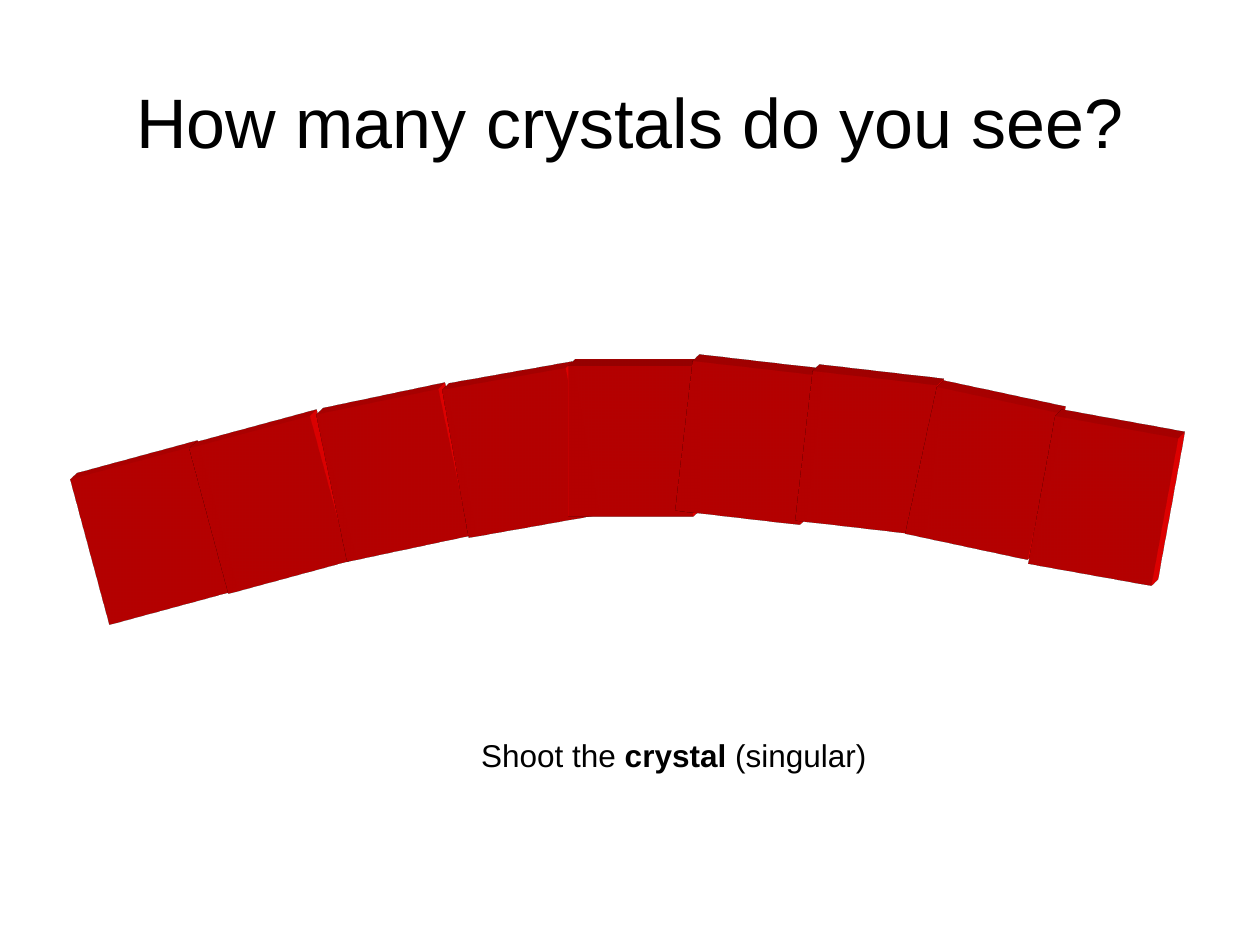
from lxml import etree
from pptx import Presentation
from pptx.dml.color import RGBColor
from pptx.enum.shapes import MSO_SHAPE
from pptx.enum.text import MSO_ANCHOR, MSO_AUTO_SIZE, PP_ALIGN
from pptx.oxml.ns import qn
from pptx.util import Inches, Pt

RECT = MSO_SHAPE.RECTANGLE
MIDDLE = MSO_ANCHOR.MIDDLE
CENTER = PP_ALIGN.CENTER
GROW = MSO_AUTO_SIZE.SHAPE_TO_FIT_TEXT

COLORS = {"text": "000000", "crystal": "FF0000"}
FONT = "Arial"
BLOCK_W, BLOCK_H = 1.19, 0.99
DEPTH = 0.15
BLOCKS = [
    (0.6, 3.76, 74.9),
    (1.54, 3.51, 74.9),
    (2.52, 3.28, 78.1),
    (3.51, 3.1, 79.9),
    (4.41, 3.01, 90),
    (5.33, 3.02, 96.6),
    (6.28, 3.1, 96.6),
    (7.2, 3.26, 102.1),
    (8.16, 3.48, 100.3),
]


def color(name):
    return RGBColor.from_string(COLORS[name])


def add_run(p, text, size, bold=False):
    r = p.add_run()
    r.text = text
    r.font.name = FONT
    r.font.size = Pt(size)
    r.font.bold = bold
    r.font.color.rgb = color("text")


def set_title(s, text):
    sp = s.shapes.title
    sp.left, sp.top, sp.width, sp.height = (Inches(v) for v in (0, 0, 10, 1.92))
    tf = sp.text_frame
    tf.vertical_anchor = MIDDLE
    p = tf.paragraphs[0]
    p.alignment = CENTER
    add_run(p, text, 40)


def extrude(sp):
    sp_pr = sp.fill._xPr
    scene = etree.SubElement(sp_pr, qn("a:scene3d"))
    etree.SubElement(scene, qn("a:camera"), prst="legacyObliqueTopRight")
    etree.SubElement(scene, qn("a:lightRig"), rig="legacyFlat3", dir="b")
    body = etree.SubElement(sp_pr, qn("a:sp3d"), prstMaterial="legacyMatte",
                            extrusionH=str(Inches(DEPTH)))
    tint = etree.SubElement(body, qn("a:extrusionClr"))
    etree.SubElement(tint, qn("a:srgbClr"), val=COLORS["crystal"])


def add_block(s, left, top, angle):
    sp = s.shapes.add_shape(RECT, Inches(left), Inches(top),
                            Inches(BLOCK_W), Inches(BLOCK_H))
    sp.rotation = angle
    sp.fill.solid()
    sp.fill.fore_color.rgb = color("crystal")
    sp.line.fill.background()
    sp.shadow.inherit = False
    extrude(sp)


def add_caption(s, parts):
    sp = s.shapes.add_textbox(Inches(3.72), Inches(5.79), Inches(3.29), Inches(0.4))
    tf = sp.text_frame
    tf.word_wrap = False
    tf.auto_size = GROW
    p = tf.paragraphs[0]
    for text, bold in parts:
        add_run(p, text, 18, bold)


def main():
    prs = Presentation()
    prs.slide_width, prs.slide_height = Inches(10), Inches(7.5)
    s = prs.slides.add_slide(prs.slide_layouts[5])
    set_title(s, "How many crystals do you see?")
    for left, top, angle in BLOCKS:
        add_block(s, left, top, angle)
    add_caption(s, [("Shoot the ", False), ("crystal", True), (" (singular)", False)])
    prs.save("out.pptx")


if __name__ == "__main__":
    main()
